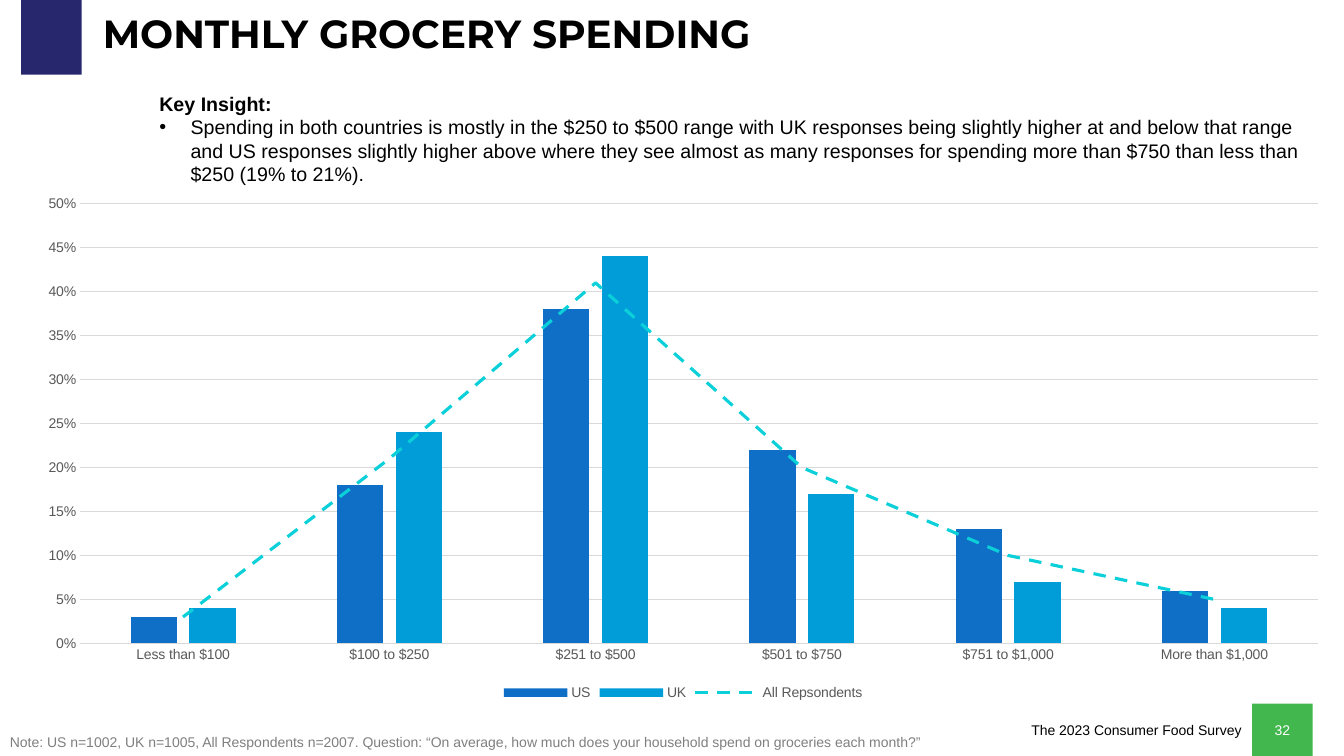
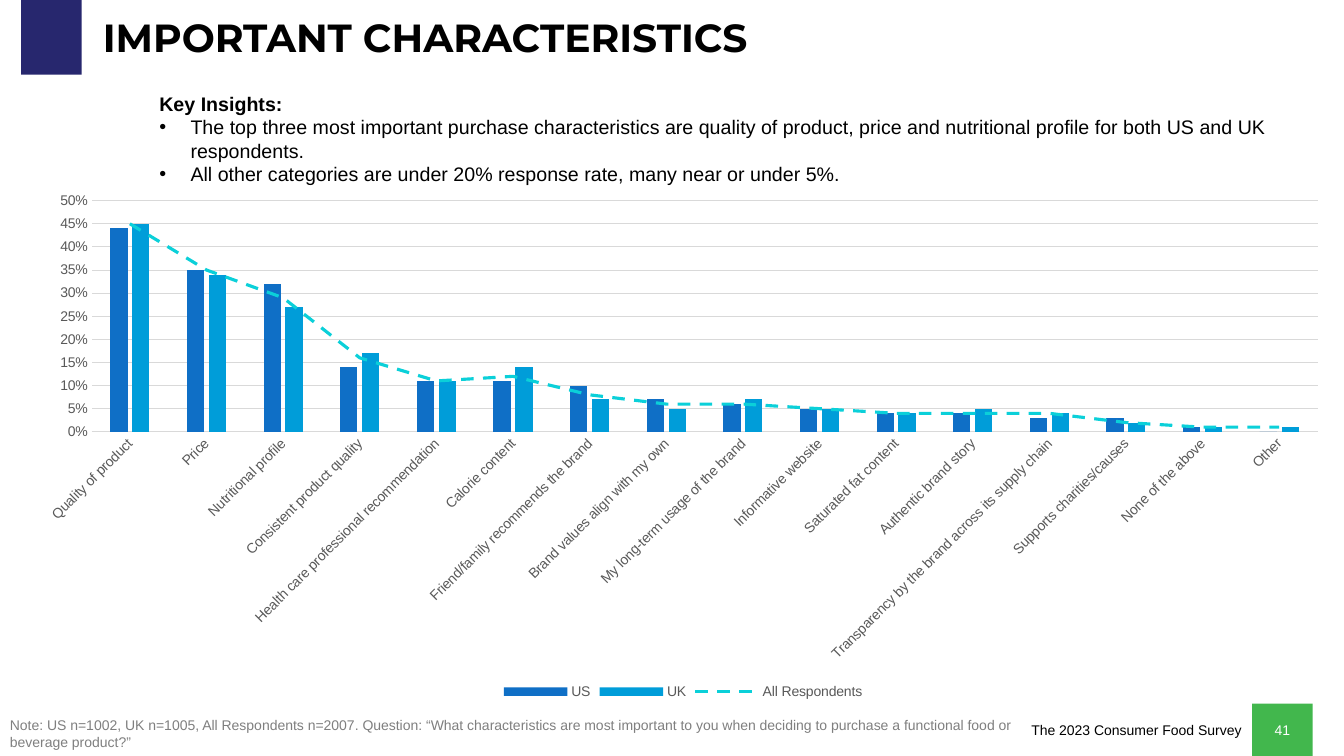
from copy import deepcopy
from dataclasses import dataclass

from lxml.etree import SubElement
from pptx import Presentation
from pptx.chart.data import CategoryChartData
from pptx.dml.color import RGBColor
from pptx.enum.chart import XL_CHART_TYPE, XL_LEGEND_POSITION, XL_MARKER_STYLE, XL_TICK_MARK
from pptx.enum.dml import MSO_LINE
from pptx.enum.shapes import MSO_SHAPE
from pptx.enum.text import MSO_ANCHOR, MSO_AUTO_SIZE, PP_ALIGN
from pptx.oxml.ns import qn
from pptx.util import Inches, Pt


@dataclass(frozen=True)
class Theme:
    """Colours, fonts and type sizes of the deck."""
    navy: str = "27276E"
    green: str = "42B74D"
    black: str = "000000"
    white: str = "FFFFFF"
    note: str = "7F7F7F"
    label: str = "595959"
    grid: str = "D9D9D9"
    bars: tuple = ("0F6FC6", "009DD9")
    trend: str = "0BD0D9"
    head: str = "Montserrat"
    body: str = "Arial"
    big: int = 28
    mid: int = 14
    small: int = 10


THEME = Theme()
WIDE, HIGH = 13.33, 7.5


def color(code):
    """Turn a hex code into a colour."""
    return RGBColor.from_string(code)


def style(font, size, code, face=THEME.body, bold=False):
    """Set the look of a font."""
    font.name, font.size, font.bold = face, Pt(size), bold
    font.color.rgb = color(code)


def place(shape, box):
    """Move a shape to a box of left, top, width and height."""
    shape.left, shape.top, shape.width, shape.height = map(Inches, box)


def block(slide, box, fill):
    """Draw a plain filled rectangle."""
    shape = slide.shapes.add_shape(MSO_SHAPE.RECTANGLE, *map(Inches, box))
    shape.shadow.inherit = False
    shape.fill.solid()
    shape.fill.fore_color.rgb = color(fill)
    shape.line.fill.background()
    return shape


def label(slide, box, text, code, align=PP_ALIGN.LEFT):
    """Write a small wrapped line of text."""
    frame = slide.shapes.add_textbox(*map(Inches, box)).text_frame
    frame.word_wrap = True
    frame.text = text
    para = frame.paragraphs[0]
    para.alignment = align
    style(para.runs[0].font, THEME.small, code)


def footer(slide, box, page):
    """Place the survey name and page tile in the footer box."""
    left, top, width, height = box
    tile = 0.6
    label(slide, (left, top + 0.13, width - tile - 0.01, 0.27),
          "The 2023 Consumer Food Survey", THEME.black, PP_ALIGN.RIGHT)
    frame = block(slide, (left + width - tile, top, tile, height), THEME.green).text_frame
    frame.text = str(page)
    frame.vertical_anchor = MSO_ANCHOR.MIDDLE
    para = frame.paragraphs[0]
    para.alignment = PP_ALIGN.CENTER
    style(para.runs[0].font, THEME.small, THEME.white)


def header(slide, box, text):
    """Fill the title placeholder."""
    title = slide.shapes.title
    place(title, box)
    frame = title.text_frame
    frame.text = text
    frame.auto_size = MSO_AUTO_SIZE.NONE
    frame.vertical_anchor = MSO_ANCHOR.MIDDLE
    para = frame.paragraphs[0]
    para.alignment = PP_ALIGN.LEFT
    para.line_spacing = 0.9
    style(para.runs[0].font, THEME.big, THEME.black, THEME.head, True)


def bullet(para, mark):
    """Set a hanging bullet, or none when there is no mark."""
    props = para._p.get_or_add_pPr()
    hang = Inches(0.31) if mark else 0
    props.set("marL", str(hang))
    props.set("indent", str(-hang))
    if mark:
        SubElement(props, qn("a:buFont")).set("typeface", THEME.body)
        SubElement(props, qn("a:buChar")).set("char", mark)
    else:
        SubElement(props, qn("a:buNone"))


def insight(slide, box, lead, points):
    """Fill the body placeholder with a lead and its points."""
    body = slide.placeholders[1]
    place(body, box)
    frame = body.text_frame
    frame.auto_size = MSO_AUTO_SIZE.NONE
    frame.vertical_anchor = MSO_ANCHOR.TOP
    for i, text in enumerate([lead, *points]):
        para = frame.add_paragraph() if i else frame.paragraphs[0]
        para.text = text
        bullet(para, "•" if i else "")
        para.space_before = Pt(0)
        style(para.runs[0].font, THEME.mid, THEME.black, bold=not i)


def split(chart):
    """Move the last bar series to a line plot on the same axes."""
    bar = chart.element.find(".//" + qn("c:barChart"))
    line = bar.makeelement(qn("c:lineChart"))
    bar.addnext(line)
    SubElement(line, qn("c:grouping")).set("val", "standard")
    SubElement(line, qn("c:varyColors")).set("val", "0")
    row = bar.findall(qn("c:ser"))[-1]
    for flag in row.findall(qn("c:invertIfNegative")):
        row.remove(flag)
    line.append(row)
    SubElement(line, qn("c:marker")).set("val", "1")
    for axis in bar.findall(qn("c:axId")):
        line.append(deepcopy(axis))


def axes(chart, turn):
    """Format both axes, with the labels turned by some degrees."""
    across, up = chart.category_axis, chart.value_axis
    for axis in (across, up):
        axis.major_tick_mark = axis.minor_tick_mark = XL_TICK_MARK.NONE
        style(axis.tick_labels.font, THEME.small, THEME.label)
    up.minimum_scale, up.maximum_scale, up.major_unit = 0, 0.5, 0.05
    up.tick_labels.number_format = "0%"
    up.tick_labels.number_format_is_linked = False
    up.format.line.fill.background()
    up.has_major_gridlines = True
    for line in (across.format.line, up.major_gridlines.format.line):
        line.color.rgb = color(THEME.grid)
        line.width = Pt(0.75)
    base = chart.element.find(".//" + qn("c:catAx"))
    base.find(".//" + qn("a:bodyPr")).set("rot", str(turn * 60000))


def graph(slide, box, cats, rows, turn):
    """Draw clustered bars with a dashed line over them."""
    data = CategoryChartData(number_format="0%")
    data.categories = cats
    for name, vals in rows.items():
        data.add_series(name, [val / 100 for val in vals])
    chart = slide.shapes.add_chart(
        XL_CHART_TYPE.COLUMN_CLUSTERED, *map(Inches, box), data).chart
    style(chart.font, THEME.small, THEME.black)
    chart.has_title = False
    chart.has_legend = True
    chart.legend.position = XL_LEGEND_POSITION.BOTTOM
    chart.legend.include_in_layout = False
    style(chart.legend.font, THEME.small, THEME.label)
    axes(chart, turn)
    split(chart)
    bars, lines = chart.plots
    bars.vary_by_categories = False
    bars.gap_width, bars.overlap = 219, -27
    for bar, code in zip(bars.series, THEME.bars):
        bar.format.fill.solid()
        bar.format.fill.fore_color.rgb = color(code)
    trend = lines.series[0]
    trend.smooth = False
    trend.marker.style = XL_MARKER_STYLE.NONE
    trend.format.line.color.rgb = color(THEME.trend)
    trend.format.line.width = Pt(2.25)
    trend.format.line.dash_style = MSO_LINE.DASH


def build(deck, page, title, top, lead, points, note, deep, chart, cats, rows, turn=0):
    """Add one survey slide."""
    slide = deck.slides.add_slide(deck.slide_layouts[1])
    block(slide, (0.21, -0.05, 0.6, 0.79), THEME.navy)
    footer(slide, (7.92, 6.98, 5.1, 0.52), page)
    header(slide, (0.92, top, 11.5, 0.5), title)
    insight(slide, (1.48, 0.86, 11.72, 1.75), lead, points)
    label(slide, (0, HIGH - deep, 10.24, deep),
          "Note: US n=1002, UK n=1005, All Respondents n=2007. Question: " + note, THEME.note)
    graph(slide, chart, cats, rows, turn)


def main():
    """Build and save the deck."""
    deck = Presentation()
    deck.slide_width, deck.slide_height = Inches(WIDE), Inches(HIGH)
    build(
        deck, 32, "MONTHLY GROCERY SPENDING", 0.11, "Key Insight:",
        ["Spending in both countries is mostly in the $250 to $500 range with UK responses "
         "being slightly higher at and below that range and US responses slightly higher "
         "above where they see almost as many responses for spending more than $750 than "
         "less than $250 (19% to 21%)."],
        "“On average, how much does your household spend on groceries each month?”", 0.27,
        (0.22, 1.84, 13.11, 5.15),
        ["Less than $100", "$100 to $250", "$251 to $500", "$501 to $750",
         "$751 to $1,000", "More than $1,000"],
        {"US": [3, 18, 38, 22, 13, 6],
         "UK": [4, 24, 44, 17, 7, 4],
         "All Repsondents": [3, 21, 41, 20, 10, 5]})
    build(
        deck, 41, "IMPORTANT CHARACTERISTICS", 0.14, "Key Insights:",
        ["The top three most important purchase characteristics are quality of product, "
         "price and nutritional profile for both US and UK respondents.",
         "All other categories are under 20% response rate, many near or under 5%."],
        "“What characteristics are most important to you when deciding to purchase a "
        "functional food or beverage product?”", 0.44,
        (0.22, 1.81, 13.11, 5.17),
        ["Quality of product", "Price", "Nutritional profile", "Consistent product quality",
         "Health care professional recommendation", "Calorie content",
         "Friend/family recommends the brand", "Brand values align with my own",
         "My long-term usage of the brand", "Informative website", "Saturated fat content",
         "Authentic brand story", "Transparency by the brand across its supply chain",
         "Supports charities/causes", "None of the above", "Other"],
        {"US": [44, 35, 32, 14, 11, 11, 10, 7, 6, 5, 4, 4, 3, 3, 1, 0],
         "UK": [45, 34, 27, 17, 11, 14, 7, 5, 7, 5, 4, 5, 4, 2, 1, 1],
         "All Respondents": [45, 35, 29, 16, 11, 12, 8, 6, 6, 5, 4, 4, 4, 2, 1, 1]},
        turn=-45)
    deck.save("out.pptx")


if __name__ == "__main__":
    main()
